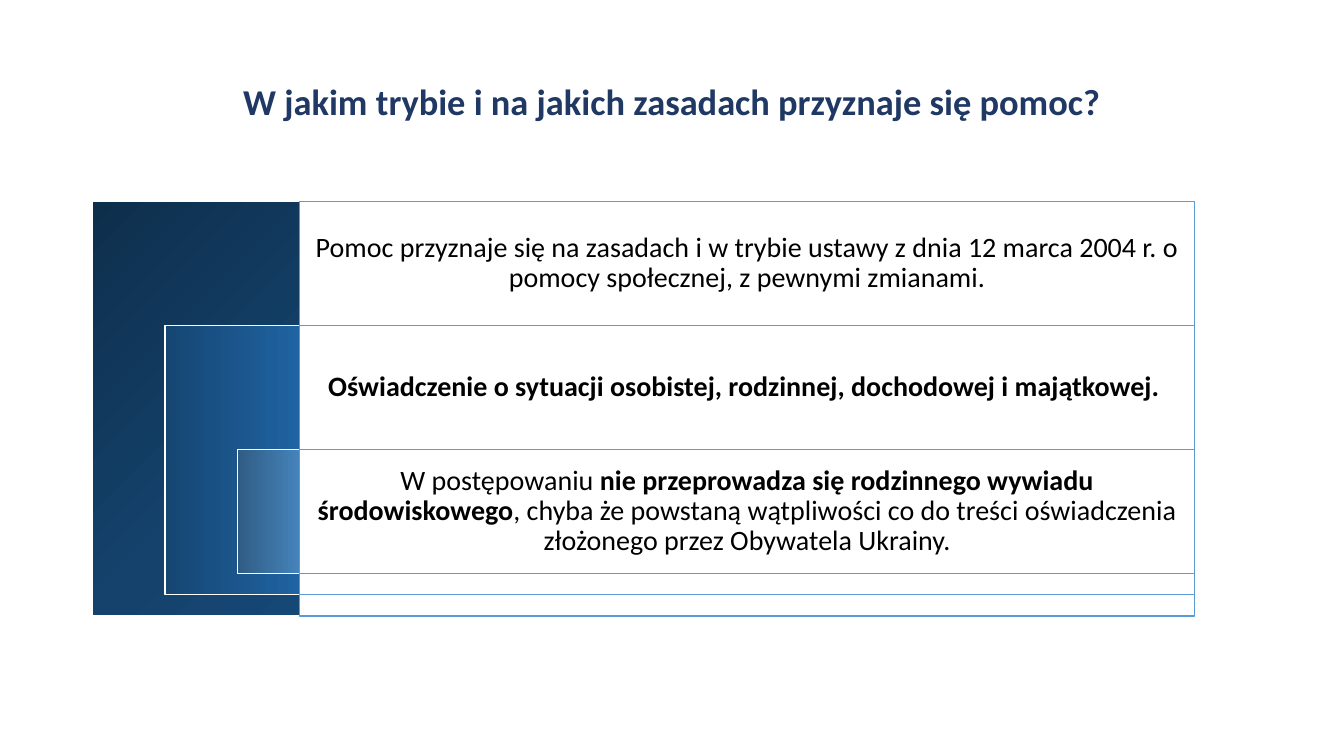
from copy import deepcopy
from pptx import Presentation
from pptx.dml.color import RGBColor
from pptx.enum.shapes import MSO_SHAPE
from pptx.enum.text import MSO_ANCHOR, PP_ALIGN
from pptx.oxml.ns import qn
from pptx.util import Inches, Pt

RECTANGLE = MSO_SHAPE.RECTANGLE
MIDDLE = MSO_ANCHOR.MIDDLE
CENTER = PP_ALIGN.CENTER

SLIDE_WIDTH, SLIDE_HEIGHT = 13.33, 7.5
AXIS = 2.97
TOP = 2
ROW = 1.23
NESTING = 1.44
PANEL_WIDTH = 8.88

rules = [
    (["0E2F4C", "14426C", "184F80"], 45,
     [("Pomoc przyznaje się na zasadach i w trybie ustawy z dnia 12 marca 2004 r. "
       "o pomocy społecznej, z pewnymi zmianami.", False)]),
    (["164672", "1F63A2", "2476C0"], 0,
     [("Oświadczenie o sytuacji osobistej, rodzinnej, dochodowej i majątkowej. ", True)]),
    (["305C84", "4583BB", "529BDE"], 0,
     [("W postępowaniu ", False),
      ("nie przeprowadza się rodzinnego wywiadu środowiskowego", True),
      (", chyba że powstaną wątpliwości co do treści oświadczenia złożonego "
       "przez Obywatela Ukrainy.", False)]),
]


def color(hex_code):
    return RGBColor.from_string(hex_code)


def add_text(left, top, width, height, parts, size, hex_code):
    frame = slide.shapes.add_textbox(
        Inches(left), Inches(top), Inches(width), Inches(height)).text_frame
    frame.word_wrap = True
    frame.vertical_anchor = MIDDLE
    frame.margin_left = frame.margin_right = Inches(0.08)
    frame.margin_top = frame.margin_bottom = Inches(0.08)
    paragraph = frame.paragraphs[0]
    paragraph.alignment = CENTER
    paragraph.line_spacing = 0.9
    for wording, bold in parts:
        run = paragraph.add_run()
        run.text = wording
        run.font.name = "Calibri"
        run.font.size = Pt(size)
        run.font.bold = bold
        run.font.color.rgb = color(hex_code)


prs = Presentation()
prs.slide_width = Inches(SLIDE_WIDTH)
prs.slide_height = Inches(SLIDE_HEIGHT)
slide = prs.slides.add_slide(prs.slide_layouts[6])

add_text(0.92, 0.67, 11.5, 0.72,
         [("W jakim trybie i na jakich zasadach przyznaje się pomoc?", True)], 26, "203864")

for level, (shades, angle, parts) in enumerate(rules):
    top = TOP + level * ROW
    side = ROW + (len(rules) - 1 - level) * NESTING

    square = slide.shapes.add_shape(
        RECTANGLE, Inches(AXIS - side / 2), Inches(top), Inches(side), Inches(side))
    square.fill.gradient()
    square.fill.gradient_angle = -angle % 360
    stop_list = square._element.spPr.find(qn("a:gradFill")).find(qn("a:gsLst"))
    stop_list.append(deepcopy(stop_list[0]))
    for position, (stop, shade) in enumerate(zip(square.fill.gradient_stops, shades)):
        stop.position = position / 2
        stop.color.rgb = color(shade)

    panel = slide.shapes.add_shape(
        RECTANGLE, Inches(AXIS), Inches(top), Inches(PANEL_WIDTH), Inches(side))
    panel.fill.solid()
    panel.fill.fore_color.rgb = color("FFFFFF")

    for block, outline in ((square, "FFFFFF"), (panel, "5B9BD5")):
        block.shadow.inherit = False
        block.line.color.rgb = color(outline)
        block.line.width = Pt(1)

    add_text(AXIS, top, PANEL_WIDTH, ROW, parts, 20, "000000")

prs.save("out.pptx")
